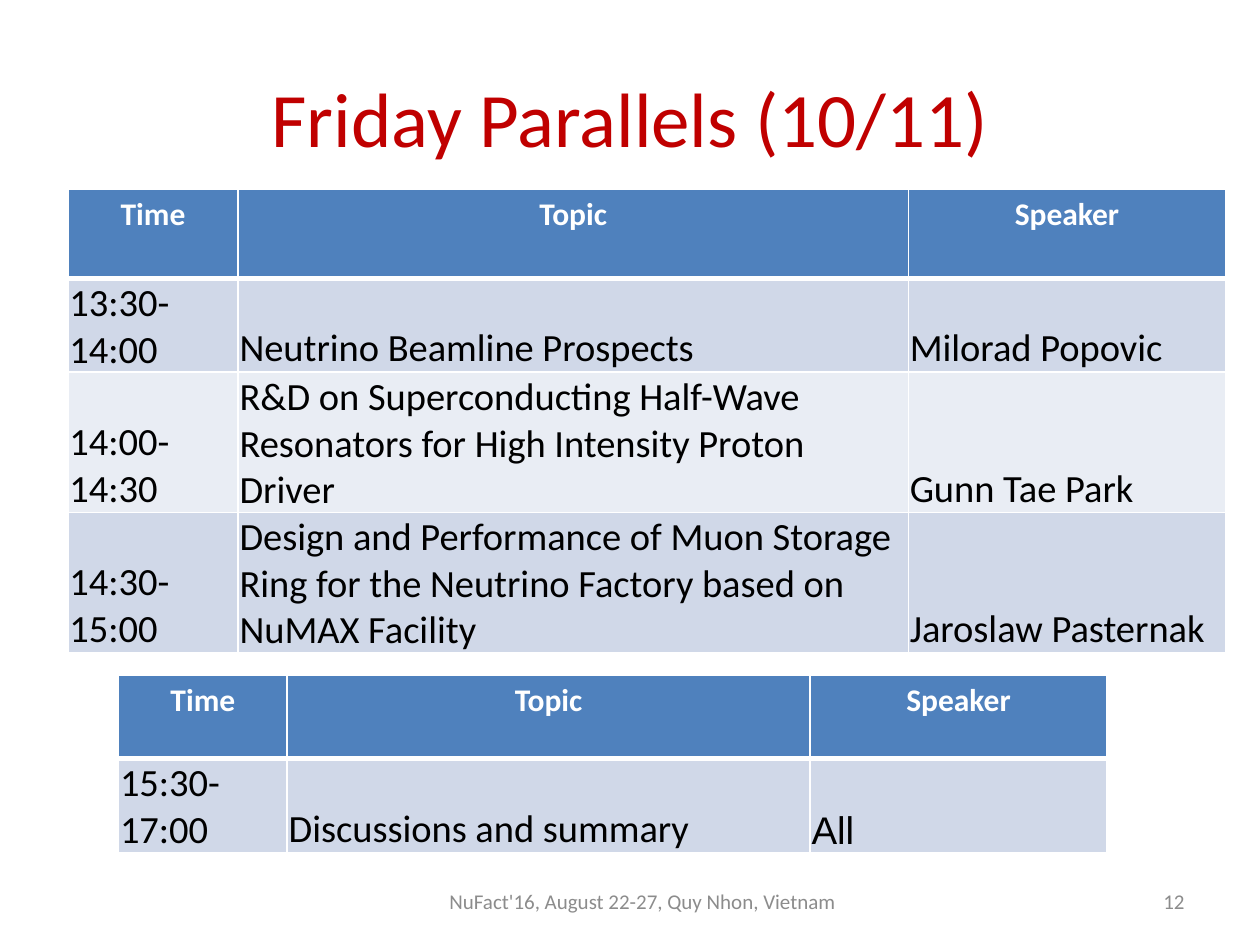
"""Build the Friday parallel sessions slide with its two timetables."""
from lxml.etree import SubElement
from pptx import Presentation
from pptx.dml.color import RGBColor
from pptx.enum.text import MSO_ANCHOR as Anchor, PP_ALIGN as Align
from pptx.oxml.ns import qn
from pptx.util import Cm, Pt

COLORS = {
    "title": "C00000",
    "header": "4F81BD",
    "odd": "D0D8E8",
    "even": "E9EDF4",
    "rule": "FFFFFF",
    "heading": "FFFFFF",
    "body": "000000",
    "footer": "8C8C8C",
}
HEADINGS = ("Time", "Topic", "Speaker")


def write(frame, text, size, color, align, font="Calibri", bold=False):
    paragraph = frame.paragraphs[0]
    paragraph.alignment = align
    run = paragraph.add_run()
    run.text = text
    run.font.name = font
    run.font.size = Pt(size)
    run.font.bold = bold
    run.font.color.rgb = RGBColor.from_string(COLORS[color])


def rule_cell(cell, top, bottom):
    properties = cell._tc.get_or_add_tcPr()
    for side, width in (("L", 1), ("R", 1), ("T", top), ("B", bottom)):
        line = SubElement(properties, qn(f"a:ln{side}"), w=str(Pt(width)))
        fill = SubElement(line, qn("a:solidFill"))
        SubElement(fill, qn("a:srgbClr"), val=COLORS["rule"])


deck = Presentation()
deck.slide_width, deck.slide_height = Cm(25.4), Cm(19.05)
slide = deck.slides.add_slide(deck.slide_layouts[6])

labels = [
    ("Friday Parallels (10/11)", (1.27, 0.76, 22.86, 3.18), 44, "title", Align.CENTER),
    ("NuFact'16, August 22-27, Quy Nhon, Vietnam", (8.69, 17.65, 8.53, 1.02), 12, "footer", Align.CENTER),
    ("12", (18.2, 17.65, 5.93, 1.02), 12, "footer", Align.RIGHT),
]
for text, box, size, color, align in labels:
    frame = slide.shapes.add_textbox(*map(Cm, box)).text_frame
    frame.word_wrap = True
    frame.vertical_anchor = Anchor.MIDDLE
    write(frame, text, size, color, align)

early_talks = [
    ("13:30-14:00", "Neutrino Beamline Prospects", "Milorad Popovic"),
    ("14:00-14:30", "R&D on Superconducting Half-Wave Resonators for High Intensity Proton Driver", "Gunn Tae Park"),
    ("14:30-15:00", "Design and Performance of Muon Storage Ring for the Neutrino Factory based on NuMAX Facility",
     "Jaroslaw Pasternak"),
]
late_talks = [("15:30-17:00", "Discussions and summary", "All")]

timetables = [
    ((1.37, 3.81), (3.43, 13.51, 6.4), (1.8, 1.24, 1.8, 1.8), early_talks),
    ((2.39, 13.61), (3.4, 10.54, 5.99), (1.68, 1.68), late_talks),
]
for (left, top), widths, heights, talks in timetables:
    timetable = slide.shapes.add_table(
        len(heights), len(widths), Cm(left), Cm(top), Cm(sum(widths)), Cm(sum(heights))
    ).table
    for column, width in zip(timetable.columns, widths):
        column.width = Cm(width)
    for row, height in zip(timetable.rows, heights):
        row.height = Cm(height)

    for row_number, entries in enumerate([HEADINGS, *talks]):
        for column_number, entry in enumerate(entries):
            cell = timetable.cell(row_number, column_number)
            rule_cell(cell, 3 if row_number == 1 else 1, 3 if row_number == 0 else 1)
            cell.fill.solid()
            if row_number == 0:
                band = "header"
                write(cell.text_frame, entry, 18, "heading", Align.CENTER, bold=True)
            else:
                band = "odd" if row_number % 2 else "even"
                cell.vertical_anchor = Anchor.BOTTOM
                cell.margin_left = cell.margin_right = cell.margin_top = Cm(0.03)
                cell.margin_bottom = Cm(0)
                font = "Arial" if entry == "All" else "Calibri"
                write(cell.text_frame, entry, 22, "body", Align.LEFT, font)
            cell.fill.fore_color.rgb = RGBColor.from_string(COLORS[band])

deck.save("out.pptx")
